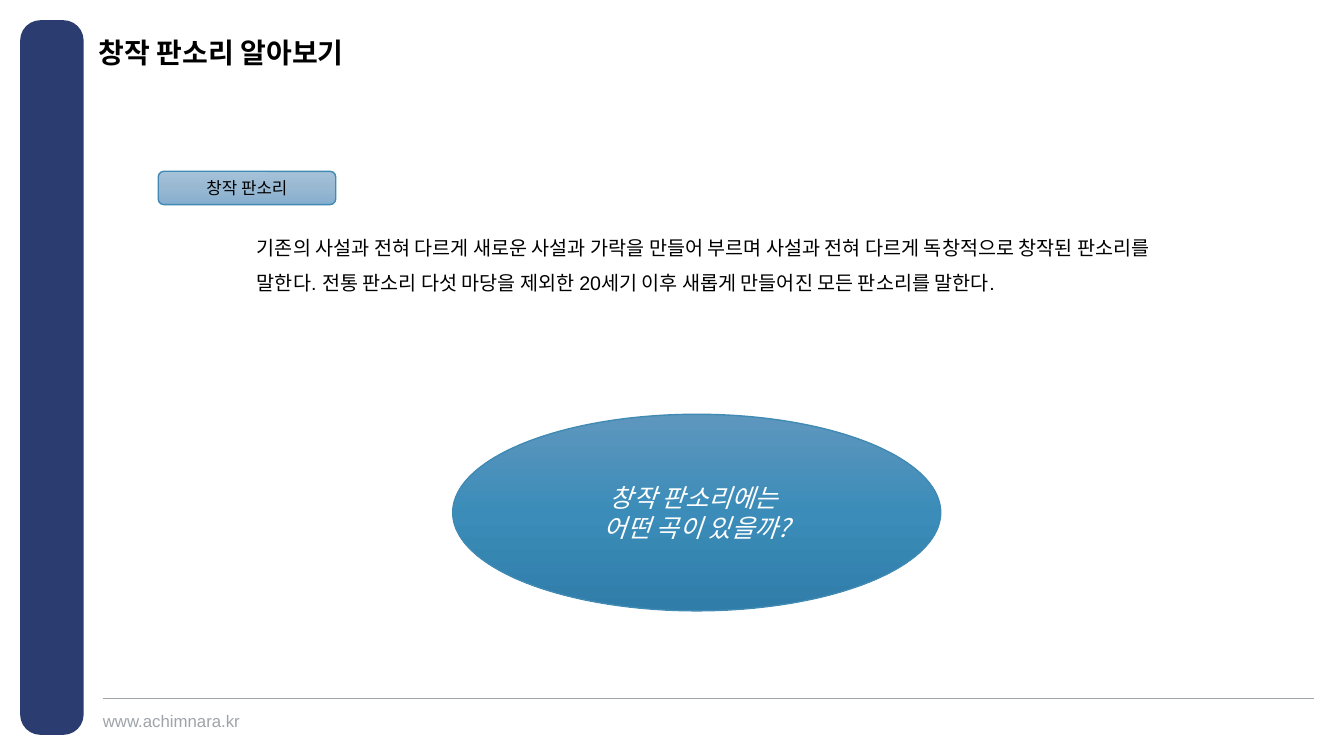
import copy

import pptx
import pptx.dml.color
import pptx.enum.shapes
import pptx.enum.text
import pptx.oxml.ns
import pptx.util
from lxml import etree

Inches = pptx.util.Inches
Pt = pptx.util.Pt
SHAPE = pptx.enum.shapes.MSO_SHAPE
ALIGN = pptx.enum.text.PP_ALIGN
ANCHOR = pptx.enum.text.MSO_ANCHOR
qn = pptx.oxml.ns.qn

COLORS = {
    "navy": "2B3C71",
    "gray": "9EA4AA",
    "black": "000000",
    "white": "FFFFFF",
    "edge": "418AB3",
}
GRADS = {
    "label": ("A6C2D8", "98B8D2", "85AECE"),
    "oval": ("5E97BE", "3B8CB9", "307DA9"),
}
KOREAN = "Noto Sans CJK KR"


def rgb(code):
    return pptx.dml.color.RGBColor.from_string(code)


def write(frame, lines, size, color, font="Arial", bold=False, italic=False,
          align=None, space=None):
    frame.word_wrap = True
    frame.text = "\n".join(lines)
    for para in frame.paragraphs:
        para.alignment = align
        para.line_spacing = space
        for run in para.runs:
            face = run.font
            face.size, face.bold, face.italic = Pt(size), bold, italic
            face.color.rgb = rgb(COLORS[color])
            face.name = font
            asian = etree.SubElement(run._r.get_or_add_rPr(), qn("a:ea"))
            asian.set("typeface", KOREAN)


def add_text(slide, box, lines, size, color, inset=True, **style):
    frame = slide.shapes.add_textbox(*map(Inches, box)).text_frame
    if not inset:
        frame.margin_left = frame.margin_right = 0
        frame.margin_top = frame.margin_bottom = 0
    write(frame, lines, size, color, **style)


def add_badge(slide, kind, box, grad, lines, size, color, italic=False):
    """Gradient shape with centred text."""
    badge = slide.shapes.add_shape(kind, *map(Inches, box))
    badge.shadow.inherit = False
    fill = badge.fill
    fill.gradient()
    fill.gradient_angle = 270
    stops = badge._element.spPr.find(qn("a:gradFill")).find(qn("a:gsLst"))
    stops.insert(1, copy.deepcopy(stops[0]))
    for i, (stop, code) in enumerate(zip(fill.gradient_stops, GRADS[grad])):
        stop.position = i / 2
        stop.color.rgb = rgb(code)
    badge.line.color.rgb = rgb(COLORS["edge"])
    badge.line.width = Pt(1)
    badge.text_frame.vertical_anchor = ANCHOR.MIDDLE
    write(badge.text_frame, lines, size, color, font=KOREAN, italic=italic,
          align=ALIGN.CENTER)


def add_side(slide, box):
    bar = slide.shapes.add_shape(SHAPE.ROUNDED_RECTANGLE, *map(Inches, box))
    bar.adjustments[0] = 0.32
    bar.shadow.inherit = False
    bar.fill.solid()
    bar.fill.fore_color.rgb = rgb(COLORS["navy"])
    bar.line.fill.background()


def add_footer(slide, box):
    left, top, width, height = box
    # Rule
    rule = slide.shapes.add_connector(
        pptx.enum.shapes.MSO_CONNECTOR.STRAIGHT,
        Inches(left + width), Inches(top), Inches(left), Inches(top))
    rule.line.color.rgb = rgb(COLORS["gray"])
    rule.line.width = Pt(0.5)
    etree.SubElement(rule._element.spPr, qn("a:effectLst"))
    # Web address
    add_text(slide, (left, top + 0.12, 1.5, height - 0.12),
             ["www.achimnara.kr"], 12, "gray", inset=False)


def add_body(slide, box):
    left, top, width, height = box
    # Label
    add_badge(slide, SHAPE.ROUNDED_RECTANGLE, (left, top, 1.76, 0.33),
              "label", ["창작 판소리"], 12, "black")
    # Definition
    add_text(slide, (left + 0.88, top + 0.47, 9.41, 0.76),
             ["기존의 사설과 전혀 다르게 새로운 사설과 가락을 만들어 부르며 "
              "사설과 전혀 다르게 독창적으로 창작된 판소리를 말한다. "
              "전통 판소리 다섯 마당을 제외한 20세기 이후 새롭게 만들어진 "
              "모든 판소리를 말한다."], 14, "black", space=1.5)
    # Question
    add_badge(slide, SHAPE.OVAL,
              (left + 2.92, top + height - 1.95, 4.84, 1.95), "oval",
              ["창작 판소리에는 ", "어떤 곡이 있을까?"], 18, "white",
              italic=True)


def main():
    deck = pptx.Presentation()
    deck.slide_width, deck.slide_height = Inches(13.33), Inches(7.5)
    slide = deck.slides.add_slide(deck.slide_layouts[6])
    add_side(slide, (0.2, 0.2, 0.63, 7.09))
    add_footer(slide, (1.02, 6.93, 12.01, 0.32))
    # Title
    add_text(slide, (0.98, 0.39, 7.87, 0.28), ["창작 판소리 알아보기"],
             20, "black", inset=False, bold=True, space=0.9)
    add_body(slide, (1.57, 1.7, 10.29, 4.36))
    deck.save("out.pptx")


if __name__ == "__main__":
    main()
